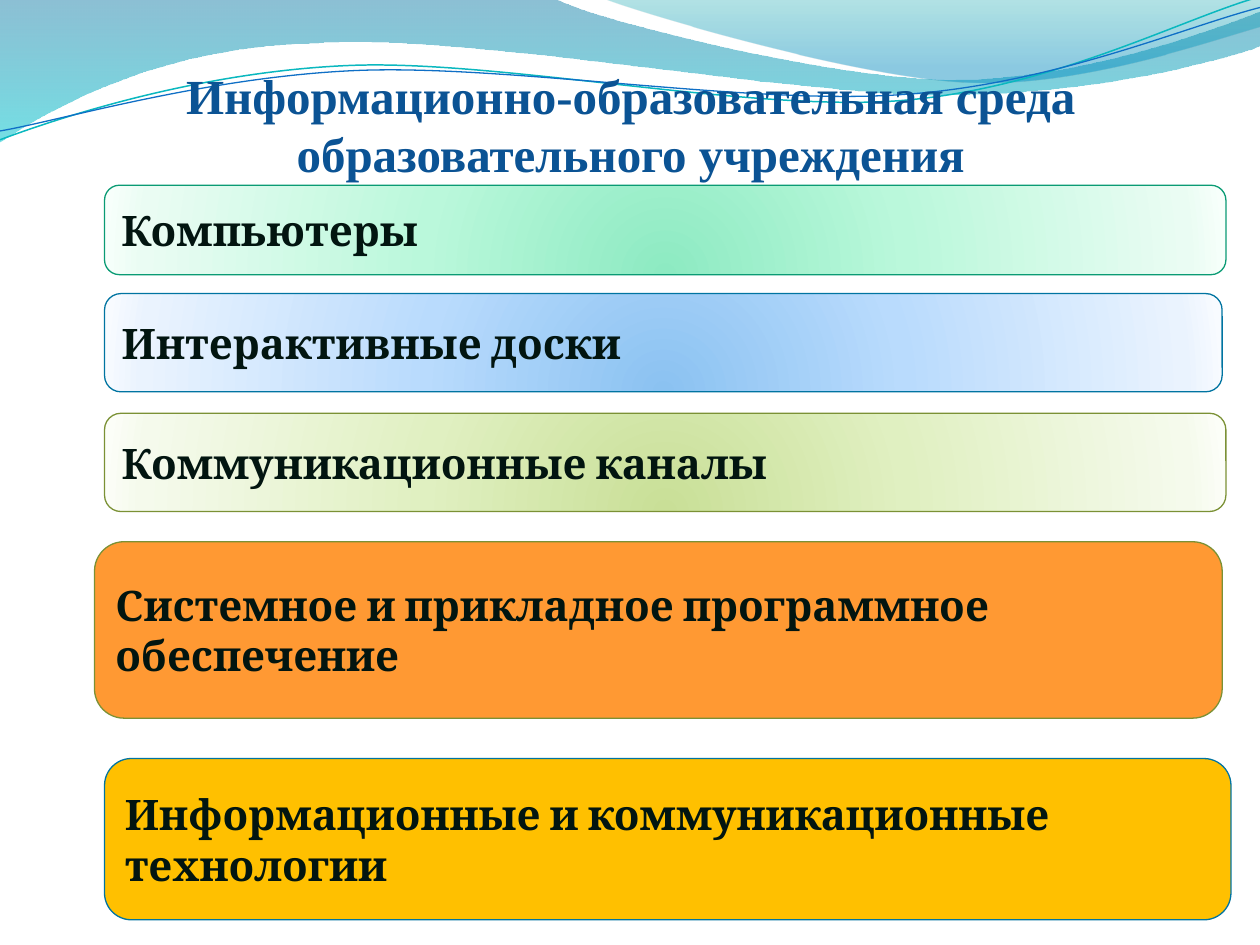
import math

from lxml import etree
from pptx import Presentation
from pptx.dml.color import RGBColor
from pptx.enum import shapes, text
from pptx.oxml import ns
from pptx.util import Cm, Pt

TITLE = "Информационно-образовательная среда образовательного учреждения"
TITLE_COLOR, LABEL_COLOR = "0B5394", "021510"

MINT = [(0, "8DEAC2"), (43, "BAF8DB"), (93, "EAFCF3"), (100, "F7FFFB")]
SKY = [(0, "8BC2F1"), (43, "B9DBFD"), (93, "EAF3FE"), (100, "F8FBFF")]
OLIVE = [(0, "C9DF97"), (43, "E0F0C1"), (93, "F5FAEC"), (100, "FCFEF8")]

BARS = [
    ("Компьютеры", (0.83, 1.47, 8.9, 0.71), MINT, "0A9B74"),
    ("Интерактивные доски", (0.83, 2.33, 8.87, 0.78), SKY, "0074A1"),
    ("Коммуникационные каналы", (0.83, 3.28, 8.9, 0.78), OLIVE, "7B9135"),
    ("Системное и прикладное программное обеспечение",
     (0.75, 4.3, 8.95, 1.4), "FF9933", "7B9135"),
    ("Информационные и коммуникационные технологии",
     (0.83, 6.02, 8.94, 1.28), "FFC000", "0074A1"),
]

WAVES = [
    ([(0, 0), (4.4, -0.01), (4.76, 0.17, 6.64, 0.63, 7.58, 0.63),
      (8.53, 0.63, 9.58, 0.26, 10, 0.09), (10.01, 0.36),
      (9.83, 0.44, 8.7, 0.76, 7.46, 0.75), (6.22, 0.75, 3.82, 0.28, 2.57, 0.34),
      (1.29, 0.36, 0.46, 0.83, -0.01, 1.13), (0, 0)],
     [(0, "0074A1", 45), (100, "00C6CF", 55)]),
    ([(4.79, -0.01), (5.09, 0.11, 6.82, 0.62, 7.69, 0.65),
      (8.56, 0.69, 9.61, 0.32, 10, 0.21), (10, 0), (4.79, -0.01)],
     [(0, "00A1A9", 30), (80, "008BBF", 45)]),
]
STRANDS = [
    ([(0, 1.11), (0.48, 0.93, 1.58, 0.57, 2.77, 0.52),
      (3.95, 0.47, 5.93, 0.89, 7.13, 0.8), (8.33, 0.71, 9.38, 0.15, 9.98, -0.02)],
     (4.99, 0.57), "0AB8BF", 0.85),
    ([(0, 1.04), (0.47, 0.96, 1.64, 0.61, 2.83, 0.56),
      (4.03, 0.51, 5.97, 0.84, 7.17, 0.75), (8.36, 0.67, 9.41, 0.21, 10, 0.06)],
     (5, 0.59), "0F6FC6", 0.75),
]
STRAND_TILT = -2.7


def inches(value):
    return Cm(value * 2.54)


def color(value):
    return RGBColor.from_string(value)


def pairs(segment):
    return list(zip(segment[::2], segment[1::2]))


def turn(segment, center, degrees):
    cos, sin = math.cos(math.radians(degrees)), math.sin(math.radians(degrees))
    turned = []
    for x, y in pairs(segment):
        dx, dy = x - center[0], y - center[1]
        turned += [center[0] + dx * cos - dy * sin, center[1] + dx * sin + dy * cos]
    return turned


def add_curve(slide, segments, close):
    anchors = [(inches(s[-2]), inches(s[-1])) for s in segments]
    builder = slide.shapes.build_freeform(*anchors[0], scale=1.0)
    builder.add_line_segments(anchors[1:], close=close)
    curve = builder.convert_to_shape()
    curve.shadow.inherit = False
    lines = list(curve._element.iter(ns.qn("a:lnTo")))
    for line, segment in zip(lines, segments[1:]):
        if len(segment) == 2:
            continue
        bezier = etree.Element(ns.qn("a:cubicBezTo"))
        for x, y in pairs(segment):
            etree.SubElement(bezier, ns.qn("a:pt"), x=str(inches(x) - curve.left),
                             y=str(inches(y) - curve.top))
        line.getparent().replace(line, bezier)
    return curve


def fill_gradient(shape, stops, radial):
    shape.fill.gradient()
    gradient = shape._element.spPr.find(ns.qn("a:gradFill"))
    for child in list(gradient):
        gradient.remove(child)
    stop_list = etree.SubElement(gradient, ns.qn("a:gsLst"))
    for position, value, *opacity in stops:
        stop = etree.SubElement(stop_list, ns.qn("a:gs"), pos=str(position * 1000))
        tint = etree.SubElement(stop, ns.qn("a:srgbClr"), val=value)
        for percent in opacity:
            etree.SubElement(tint, ns.qn("a:alpha"), val=str(percent * 1000))
    if radial:
        path = etree.SubElement(gradient, ns.qn("a:path"), path="circle")
        etree.SubElement(path, ns.qn("a:fillToRect"),
                         l="50000", t="130000", r="50000", b="-30000")
    else:
        etree.SubElement(gradient, ns.qn("a:lin"), ang="5400000", scaled="0")


def outline(shape, value, width):
    shape.line.color.rgb = color(value)
    shape.line.width = Pt(width)


def write(shape, words, font_name, size, value, align, anchor):
    frame = shape.text_frame
    frame.word_wrap = True
    frame.vertical_anchor = anchor
    paragraph = frame.paragraphs[0]
    paragraph.text = words
    paragraph.alignment = align
    font = paragraph.font
    font.name, font.size, font.bold = font_name, Pt(size), True
    font.color.rgb = color(value)
    return frame


def main():
    deck = Presentation()
    deck.slide_width, deck.slide_height = inches(10), inches(7.5)
    slide = deck.slides.add_slide(deck.slide_layouts[6])

    for segments, stops in WAVES:
        wave = add_curve(slide, segments, True)
        fill_gradient(wave, stops, False)
        wave.line.fill.background()
    for segments, center, value, width in STRANDS:
        level = [turn(segment, center, -STRAND_TILT) for segment in segments]
        strand = add_curve(slide, level, False)
        middle = inches(center[0]), inches(center[1])
        box_middle = strand.left + strand.width / 2, strand.top + strand.height / 2
        offset = [b - m for b, m in zip(box_middle, middle)]
        shifted = turn(offset, (0, 0), STRAND_TILT)
        strand.left += round(shifted[0] - offset[0])
        strand.top += round(shifted[1] - offset[1])
        strand.rotation = STRAND_TILT
        strand.fill.background()
        outline(strand, value, width)

    title = slide.shapes.add_textbox(*map(inches, (0.35, 0, 9.31, 1.45)))
    frame = write(title, TITLE, "Times New Roman", 28, TITLE_COLOR,
                  text.PP_ALIGN.CENTER, text.MSO_ANCHOR.BOTTOM)
    frame.margin_left = frame.margin_right = frame.margin_bottom = 0

    for label, place, fill, edge in BARS:
        bar = slide.shapes.add_shape(shapes.MSO_SHAPE.ROUNDED_RECTANGLE,
                                     *map(inches, place))
        bar.shadow.inherit = False
        if isinstance(fill, str):
            bar.fill.solid()
            bar.fill.fore_color.rgb = color(fill)
        else:
            fill_gradient(bar, fill, True)
        outline(bar, edge, 0.75)
        write(bar, label, "Cambria", 24, LABEL_COLOR,
              text.PP_ALIGN.LEFT, text.MSO_ANCHOR.MIDDLE)

    deck.save("out.pptx")


if __name__ == "__main__":
    main()
